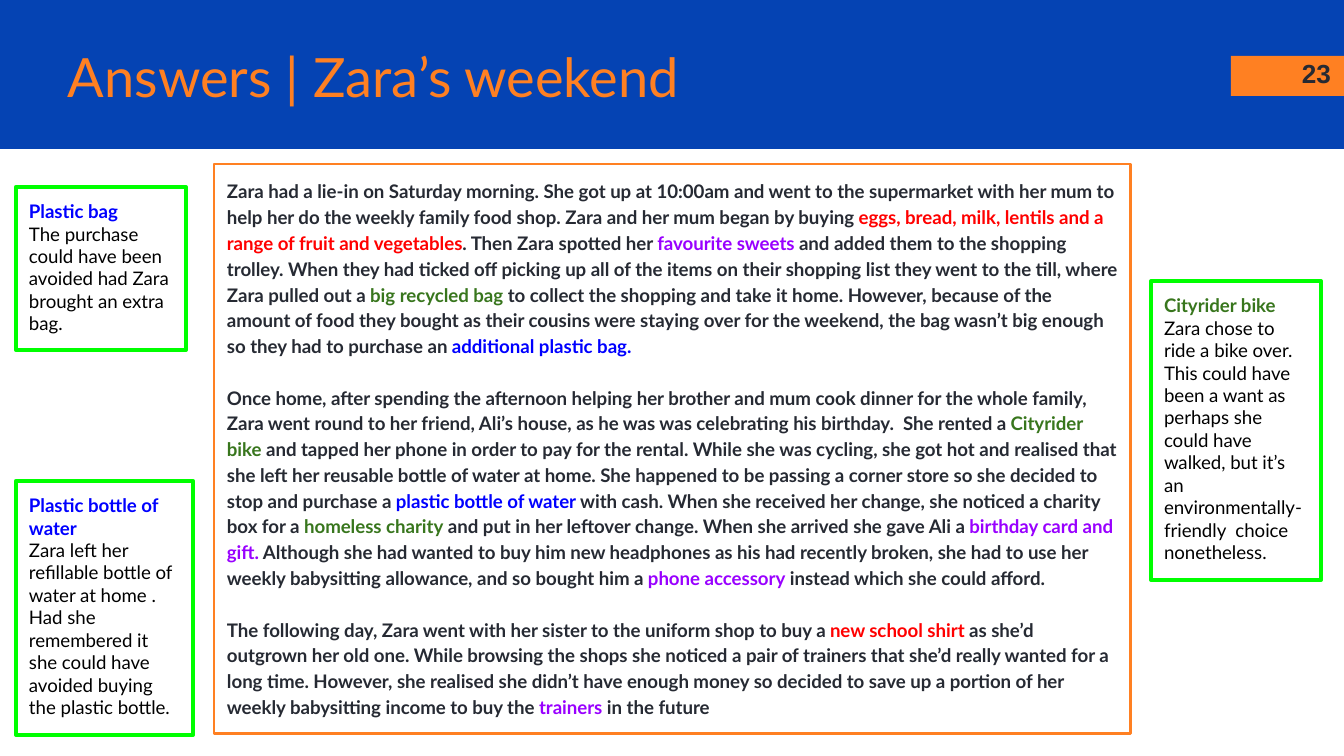
from dataclasses import dataclass

from pptx import Presentation
from pptx.dml.color import RGBColor
from pptx.enum.shapes import MSO_SHAPE
from pptx.enum.text import MSO_ANCHOR, PP_ALIGN
from pptx.util import Pt

EMU_PER_PX = 9144000 / 1344  # the slide is 1344 px wide


@dataclass(frozen=True)
class Theme:
    blue: str = "0543B3"
    orange: str = "FF8022"
    white: str = "FFFFFF"
    black: str = "000000"
    ink: str = "262A33"
    need: str = "FF0000"
    want: str = "9900FF"
    green: str = "38761D"
    avoidable: str = "0000FF"
    note_line: str = "00FF00"
    font: str = "Lato"
    number_font: str = "Arial"
    title_size: int = 29
    number_size: int = 14
    body_size: int = 10
    story_spacing: float = 1.15
    story_gap: float = 13.8
    inset: int = 13


T = Theme()

# Each paragraph is a list of (text, colour) runs
STORY = [
    [
        ("Zara had a lie-in on Saturday morning. She got up at 10:00am and went to the "
         "supermarket with her mum to help her do the weekly family food shop. Zara and "
         "her mum began by buying", T.ink),
        (" eggs, bread, milk, lentils and a range of fruit and vegetables", T.need),
        (". Then Zara spotted her ", T.ink),
        ("favourite sweets", T.want),
        (" and added them to the shopping trolley. When they had ticked off picking up all "
         "of the items on their shopping list they went to the till, where Zara pulled "
         "out a ", T.ink),
        ("big recycled bag ", T.green),
        ("to collect the shopping and take it home. However, because of the amount of food "
         "they bought as their cousins were staying over for the weekend, the bag wasn’t "
         "big enough so they had to purchase an ", T.ink),
        ("additional plastic bag.", T.avoidable),
    ],
    [
        ("Once home, after spending the afternoon helping her brother and mum cook dinner "
         "for the whole family, Zara went round to her friend, Ali’s house, as he was was "
         "celebrating his birthday.  She rented a ", T.ink),
        ("Cityrider bike ", T.green),
        ("and tapped her phone in order to pay for the rental. While she was cycling, she "
         "got hot and realised that she left her reusable bottle of water at home. She "
         "happened to be passing a corner store so she decided to stop and purchase a ", T.ink),
        ("plastic bottle of water ", T.avoidable),
        ("with cash. When she received her change, she noticed a charity box for a ", T.ink),
        ("homeless charity", T.green),
        (" and put in her leftover change. When she arrived she gave Ali a ", T.ink),
        ("birthday card and gift.", T.want),
        (" Although she had wanted to buy him new headphones as his had recently broken, "
         "she had to use her weekly babysitting allowance, and so bought him a ", T.ink),
        ("phone accessory", T.want),
        (" instead which she could afford.", T.ink),
    ],
    [
        ("The following day, Zara went with her sister to the uniform shop to buy a ", T.ink),
        ("new school shirt", T.need),
        (" as she’d outgrown her old one. While browsing the shops she noticed a pair of "
         "trainers that she’d really wanted for a long time. However, she realised she "
         "didn’t have enough money so decided to save up a portion of her weekly "
         "babysitting income to buy the ", T.ink),
        ("trainers", T.want),
        (" in the future", T.ink),
    ],
]

# Box, heading, heading colour, comment
NOTES = [
    ((16, 187, 170, 163), "Plastic bag", T.avoidable,
     "The purchase could have been avoided had Zara brought an extra bag."),
    ((16, 481, 177, 254), "Plastic bottle of water", T.avoidable,
     "Zara left her refillable bottle of water at home . Had she remembered it she could "
     "have avoided buying the plastic bottle."),
    ((1151, 281, 170, 299), "Cityrider bike", T.green,
     "Zara chose to ride a bike over. This could have been a want as perhaps she could "
     "have walked, but it’s an environmentally-friendly  choice nonetheless."),
]


def px(n):
    return round(n * EMU_PER_PX)


def add_rect(s, box, fill=None, line=None, width=0):
    sp = s.shapes.add_shape(MSO_SHAPE.RECTANGLE, *map(px, box))
    sp.shadow.inherit = False
    if fill:
        sp.fill.solid()
        sp.fill.fore_color.rgb = RGBColor.from_string(fill)
    else:
        sp.fill.background()
    if line:
        sp.line.color.rgb = RGBColor.from_string(line)
        sp.line.width = Pt(width)
    else:
        sp.line.fill.background()
    return sp


def setup_frame(sp, anchor=MSO_ANCHOR.TOP):
    tf = sp.text_frame
    tf.word_wrap = True
    tf.vertical_anchor = anchor
    tf.margin_left = tf.margin_right = tf.margin_top = tf.margin_bottom = px(T.inset)
    return tf


def add_run(p, text, color, size=T.body_size, font=T.font, bold=False):
    r = p.add_run()
    r.text = text
    r.font.name = font
    r.font.size = Pt(size)
    r.font.bold = bold
    r.font.color.rgb = RGBColor.from_string(color)


def next_paragraph(tf, first, align=PP_ALIGN.LEFT):
    p = tf.paragraphs[0] if first else tf.add_paragraph()
    p.alignment = align
    return p


def add_label(s, box, text, anchor, align, **style):
    tf = setup_frame(s.shapes.add_textbox(*map(px, box)), anchor)
    add_run(next_paragraph(tf, True, align), text, **style)


def add_story(s, box):
    tf = setup_frame(add_rect(s, box, T.white, T.orange, 1.5))
    for i, runs in enumerate(STORY):
        p = next_paragraph(tf, i == 0)
        p.line_spacing = T.story_spacing
        if i:
            p.space_before = Pt(T.story_gap)
        for text, color in runs:
            add_run(p, text, color, bold=True)


def add_note(s, box, heading, color, comment):
    tf = setup_frame(add_rect(s, box, line=T.note_line, width=2.25))
    add_run(next_paragraph(tf, True), heading, color, bold=True)
    add_run(next_paragraph(tf, False), comment, T.black)


def main():
    prs = Presentation()
    prs.slide_width, prs.slide_height = px(1344), px(756)
    s = prs.slides.add_slide(prs.slide_layouts[6])

    # Header band, page number and title
    add_rect(s, (0, 0, 1344, 149), T.blue)
    add_rect(s, (1231, 56, 113, 40), T.orange)
    add_label(s, (1263, 44, 81, 58), "23", MSO_ANCHOR.TOP, PP_ALIGN.RIGHT,
              color=T.ink, size=T.number_size, font=T.number_font, bold=True)
    add_label(s, (55, 38, 1138, 75), "Answers | Zara’s weekend", MSO_ANCHOR.MIDDLE,
              PP_ALIGN.LEFT, color=T.orange, size=T.title_size)

    # Story with colour-coded purchases
    add_story(s, (214, 164, 917, 570))

    # Comments beside the story
    for note in NOTES:
        add_note(s, *note)

    prs.save("out.pptx")


if __name__ == "__main__":
    main()
